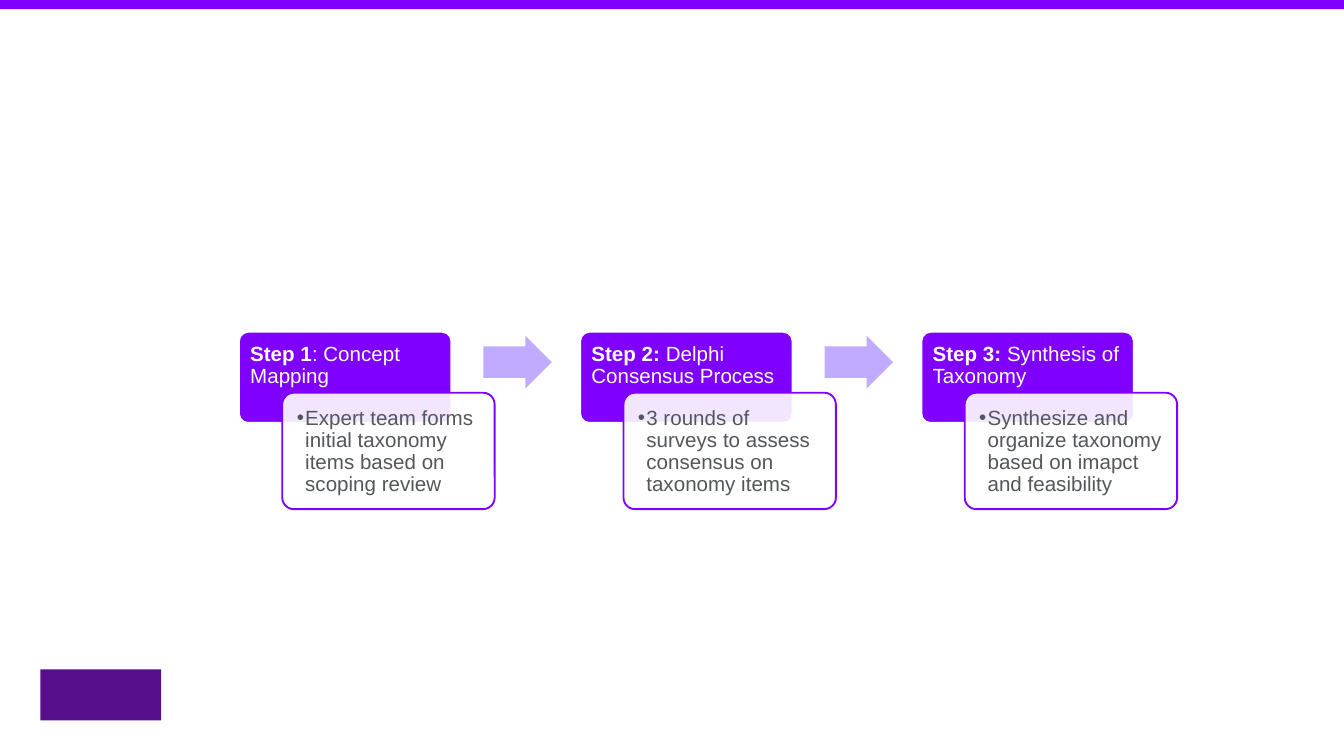
from lxml import etree
from pptx import Presentation
from pptx.dml.color import RGBColor
from pptx.enum import shapes, text
from pptx.oxml.ns import qn
from pptx.util import Pt

PURPLE, LILAC, DARK, WHITE, GREY = "8000FF", "C0ABFF", "580F8B", "FFFFFF", "53565A"
KIND = shapes.MSO_SHAPE
LEFT, TOP, PITCH = 128, 177.8, 182.8
STEPS = [
    ("Step 1", ": Concept Mapping",
     "Expert team forms initial taxonomy items based on scoping review"),
    ("Step 2: ", "Delphi Consensus Process",
     "3 rounds of surveys to assess consensus on taxonomy items"),
    ("Step 3: ", "Synthesis of Taxonomy",
     "Synthesize and organize taxonomy based on imapct and feasibility"),
]


def rgb(color):
    return RGBColor.from_string(color)


def add_box(slide, kind, box, fill, line=None, adjust=(), alpha=None):
    """Add a filled shape; box is left, top, width, height; alpha is percent."""
    sp = slide.shapes.add_shape(kind, *map(Pt, box))
    sp.shadow.inherit = False
    for i, value in enumerate(adjust):
        sp.adjustments[i] = value
    sp.fill.solid()
    sp.fill.fore_color.rgb = rgb(fill)
    if alpha is not None:
        clr = sp._element.spPr.find(qn("a:solidFill"))[0]
        etree.SubElement(clr, qn("a:alpha"), val=str(alpha * 1000))
    if line:
        sp.line.color.rgb = rgb(line)
        sp.line.width = Pt(1)
    else:
        sp.line.fill.background()


def add_text(slide, box, runs, color, bottom=6):
    """Add one paragraph of (text, bold) runs and return it."""
    tf = slide.shapes.add_textbox(*map(Pt, box)).text_frame
    frame = {"word_wrap": True, "auto_size": text.MSO_AUTO_SIZE.NONE,
             "vertical_anchor": text.MSO_ANCHOR.TOP,
             "margin_left": Pt(6), "margin_top": Pt(6.4),
             "margin_right": Pt(6), "margin_bottom": Pt(bottom)}
    for name, value in frame.items():
        setattr(tf, name, value)
    p = tf.paragraphs[0]
    p.line_spacing = 0.9
    for words, bold in runs:
        r = p.add_run()
        r.text = words
        for name, value in {"name": "Arial", "size": Pt(11), "bold": bold}.items():
            setattr(r.font, name, value)
        r.font.color.rgb = rgb(color)
    return p


def add_bullet(p, indent):
    pPr = p._p.get_or_add_pPr()
    pPr.set("marL", str(Pt(indent)))
    pPr.set("indent", str(-Pt(indent)))
    etree.SubElement(pPr, qn("a:buFont"), typeface="Arial")
    etree.SubElement(pPr, qn("a:buChar"), char="•")


def add_step(slide, x, label, title, detail):
    add_box(slide, KIND.ROUNDED_RECTANGLE, (x, TOP, 113.8, 48.8), PURPLE, WHITE, [0.1])
    add_text(slide, (x, TOP, 113.8, 32.4), [(label, True), (title, False)], WHITE, 3.6)
    add_box(slide, KIND.ROUNDED_RECTANGLE, (x + 23.2, TOP + 32.6, 113.8, 62.4),
            WHITE, PURPLE, [0.1], alpha=90)
    p = add_text(slide, (x + 25, TOP + 34.2, 110.6, 59), [(detail, False)], GREY)
    add_bullet(p, 4.5)


def main():
    prs = Presentation()
    prs.slide_width, prs.slide_height = Pt(720), Pt(405)
    slide = prs.slides.add_slide(prs.slide_layouts[6])
    add_box(slide, KIND.RECTANGLE, (0, 0, 720, 5), PURPLE)
    add_box(slide, KIND.RECTANGLE, (21.6, 358.6, 64.8, 27.4), DARK)
    for i, step in enumerate(STEPS):
        x = LEFT + i * PITCH
        add_step(slide, x, *step)
        if i < len(STEPS) - 1:
            add_box(slide, KIND.RIGHT_ARROW, (x + 131, TOP + 2.1, 36.6, 28.3),
                    LILAC, adjust=[0.6, 0.5])
    prs.save("out.pptx")


if __name__ == "__main__":
    main()
